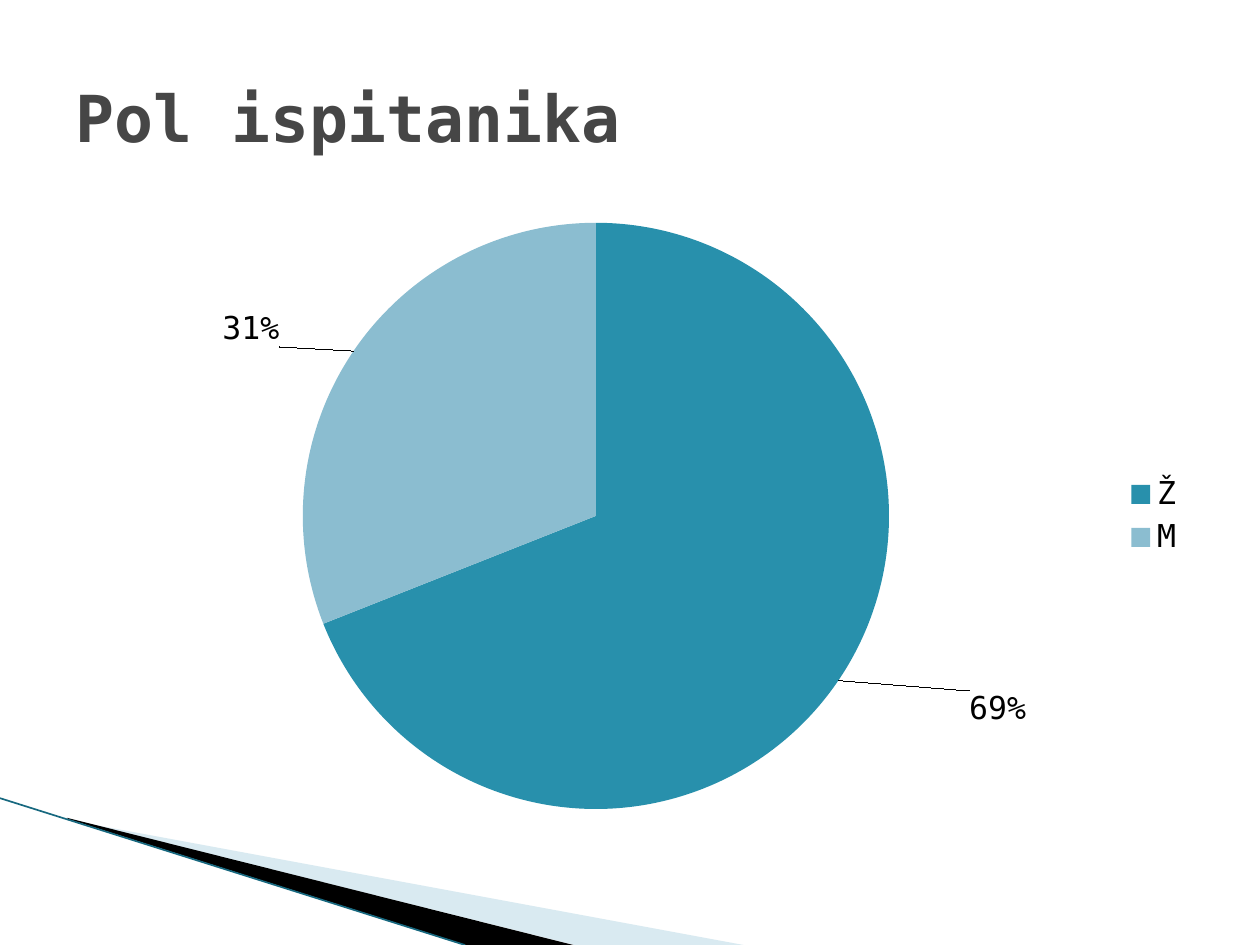
import pptx
import pptx.chart.data
import pptx.dml.color
import pptx.enum.chart
import pptx.enum.shapes
import pptx.enum.text
import pptx.oxml
import pptx.oxml.ns
import pptx.util

COLUMNS, ROWS = 20, 15


def colour(hex_text):
    return pptx.dml.color.RGBColor.from_string(hex_text)


def manual_layout(x, y, w=None, h=None):
    layout = pptx.oxml.parse_xml(
        f"<c:layout {pptx.oxml.ns.nsdecls('c')}><c:manualLayout/></c:layout>")
    entries = [("x", x), ("y", y)]
    if w is not None:
        entries = ([("layoutTarget", "inner"), ("xMode", "edge"), ("yMode", "edge")]
                   + entries + [("w", w), ("h", h)])
    for tag, value in entries:
        entry = pptx.oxml.ns.qn(f"c:{tag}")
        layout[0].append(layout.makeelement(entry, {"val": str(value)}))
    return layout


class SlideBuilder:
    font_name = "DejaVu Sans Mono"
    title_size, chart_size = 37, 18
    title_colour, chart_colour = "464646", "000000"

    def __init__(self, deck):
        self.slide = deck.slides.add_slide(deck.slide_layouts[5])
        self.column = deck.slide_width / COLUMNS
        self.row = deck.slide_height / ROWS

    def place(self, x, y):
        return round(x * self.column), round(y * self.row)

    def style(self, font, size, hex_text, bold=False):
        font.name, font.size, font.bold = self.font_name, pptx.util.Pt(size), bold
        font.color.rgb = colour(hex_text)

    def title(self, text, x, y, w, h):
        heading = self.slide.shapes.title
        heading.left, heading.top = self.place(x, y)
        heading.width, heading.height = self.place(w, h)
        frame = heading.text_frame
        frame.text = text
        frame.vertical_anchor = pptx.enum.text.MSO_ANCHOR.MIDDLE
        frame.paragraphs[0].alignment = pptx.enum.text.PP_ALIGN.LEFT
        self.style(frame.paragraphs[0].runs[0].font, self.title_size, self.title_colour, True)

    def wedge(self, corners, hex_text, opacity=100):
        start, *others = [self.place(*corner) for corner in corners]
        builder = self.slide.shapes.build_freeform(*start)
        builder.add_line_segments(others, close=True)
        wedge = builder.convert_to_shape()
        wedge.shadow.inherit = False
        wedge.fill.solid()
        wedge.fill.fore_color.rgb = colour(hex_text)
        wedge.line.fill.background()
        if opacity < 100:
            tint = wedge.fill._xPr.find(".//" + pptx.oxml.ns.qn("a:srgbClr"))
            alpha = pptx.oxml.ns.qn("a:alpha")
            tint.append(tint.makeelement(alpha, {"val": str(opacity * 1000)}))

    def line(self, start, end, hex_text, width):
        edge = self.slide.shapes.add_connector(
            pptx.enum.shapes.MSO_CONNECTOR.STRAIGHT, *self.place(*start), *self.place(*end))
        edge.line.color.rgb = colour(hex_text)
        edge.line.width = pptx.util.Pt(width)
        properties = edge._element.spPr
        properties.append(properties.makeelement(pptx.oxml.ns.qn("a:effectLst"), {}))

    def pie(self, shares, fills, label_shifts, plot_area, x, y, w, h):
        data = pptx.chart.data.CategoryChartData(number_format="0%")
        data.categories = list(shares)
        data.add_series("Series 1", list(shares.values()))
        chart = self.slide.shapes.add_chart(
            pptx.enum.chart.XL_CHART_TYPE.PIE, *self.place(x, y), *self.place(w, h), data).chart
        self.style(chart.font, self.chart_size, self.chart_colour)
        chart.has_title = False
        chart.has_legend = True
        chart.legend.position = pptx.enum.chart.XL_LEGEND_POSITION.RIGHT
        chart.legend.include_in_layout = False
        area = chart._chartSpace.chart.plotArea
        for old_layout in area.findall(pptx.oxml.ns.qn("c:layout")):
            area.remove(old_layout)
        area.insert(0, manual_layout(*plot_area))

        plot = chart.plots[0]
        plot.vary_by_categories = True
        series = plot.series[0]
        labels = series.data_labels
        labels.show_value = True
        labels.number_format, labels.number_format_is_linked = "0%", False
        self.style(labels.font, self.chart_size, self.chart_colour)
        for index, (fill, shift) in enumerate(zip(fills, label_shifts)):
            point = series.points[index]
            point.format.fill.solid()
            point.format.fill.fore_color.rgb = colour(fill)
            point.format.line.fill.background()
            label = point.data_label
            label.position = pptx.enum.chart.XL_LABEL_POSITION.OUTSIDE_END
            self.style(label.font, self.chart_size, self.chart_colour)
            label._dLbl.insert(1, manual_layout(*shift))


def main():
    deck = pptx.Presentation()
    deck.slide_width, deck.slide_height = pptx.util.Inches(10), pptx.util.Inches(7.5)
    builder = SlideBuilder(deck)
    builder.wedge([(1.1, 13.02), (11.8, 15), (9.12, 15), (1.1, 13)], "A0CBDC", 40)
    builder.wedge([(1.06, 12.98), (9.1, 15), (7.4, 15), (1.08, 13)], "000000")
    builder.line((0, 12.67), (7.38, 15), "17687F", 0.95)
    builder.title("Pol ispitanika", 1, 0.6, 18, 2.5)
    builder.pie({"Ž": 0.69, "M": 0.31}, ["2890AC", "8BBDD0"],
                [(0.11, 0.01), (-0.06, 0)], (0.21, 0.03, 0.52, 0.94),
                1, 3.24, 18, 9.9)
    deck.save("out.pptx")


if __name__ == "__main__":
    main()
